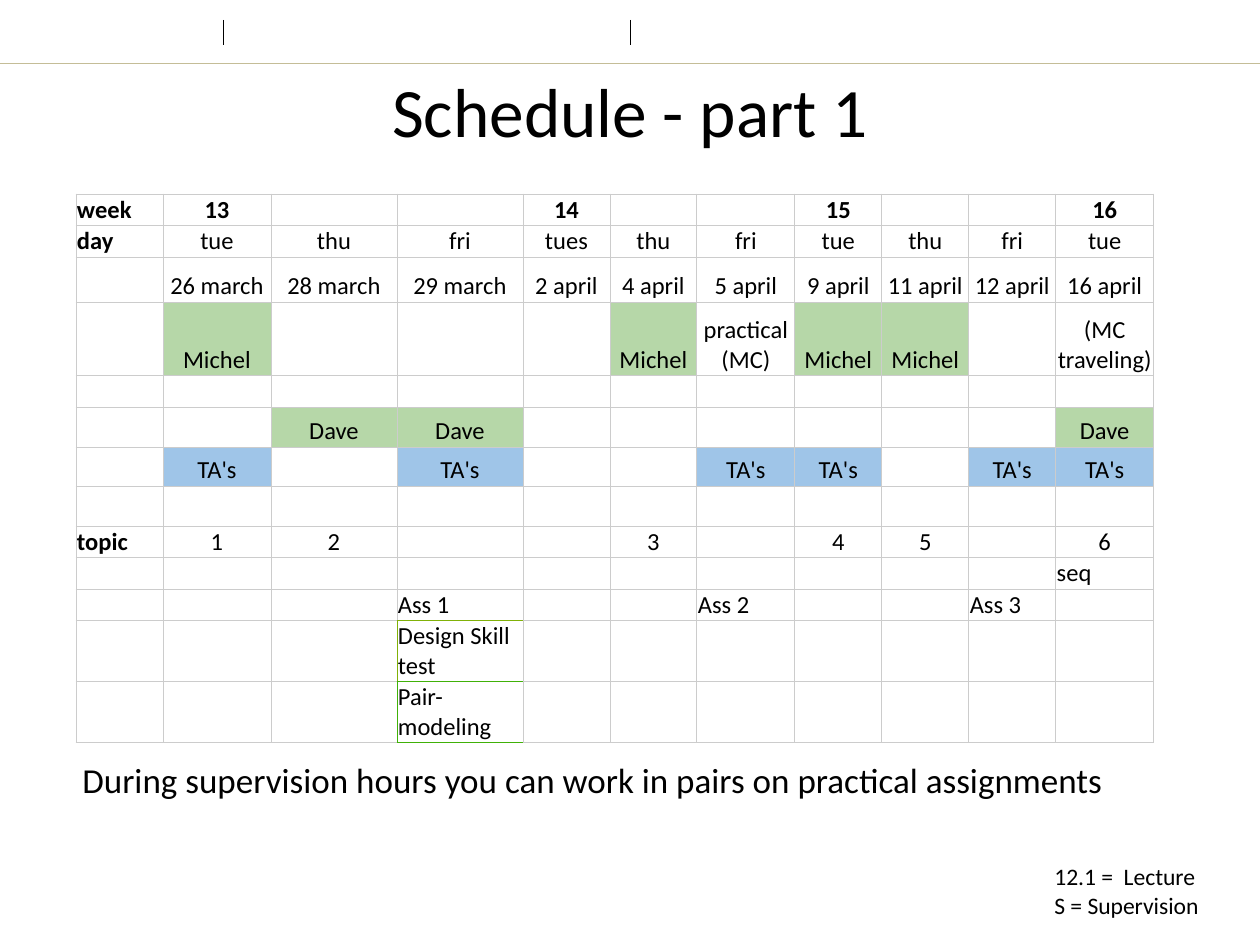
"""Build the course schedule slide with its table, note and legend."""
from dataclasses import dataclass

from lxml import etree
from pptx import Presentation
from pptx.dml.color import RGBColor
from pptx.enum.shapes import MSO_CONNECTOR
from pptx.enum.text import MSO_ANCHOR, PP_ALIGN
from pptx.oxml.ns import qn
from pptx.util import Emu, Pt

LEFT, CENTER = PP_ALIGN.LEFT, PP_ALIGN.CENTER
TOP, MIDDLE, BOTTOM = MSO_ANCHOR.TOP, MSO_ANCHOR.MIDDLE, MSO_ANCHOR.BOTTOM
STRAIGHT = MSO_CONNECTOR.STRAIGHT
SCALE = 914400 / 126


@dataclass(frozen=True)
class Theme:
    font: str = "Calibri"
    ink: str = "000000"
    rule: str = "C4BD97"
    grid: str = "CCCCCC"
    lecture: str = "B6D7A8"
    supervision: str = "9FC5E8"
    lime: str = "80B108"
    green: str = "40B108"
    title: float = 39.6
    note: float = 20
    legend: float = 13.5
    cell: float = 14
    border: float = 0.5


THEME = Theme()

TEXTS = [
    (["Schedule - part 1"], (63, 63, 1134, 94), THEME.title, CENTER, MIDDLE),
    (["12.1 =  Lecture", "S = Supervision"], (1042, 856, 210, 70), THEME.legend, LEFT, TOP),
    (["During supervision hours you can work in pairs on practical assignments"],
     (70, 752, 1182, 56), THEME.note, LEFT, TOP),
]
LINES = [
    ((0, 63, 1260, 63), THEME.rule, 0.25),
    ((223, 20, 223, 45), THEME.ink, 0.5),
    ((630, 20, 630, 45), THEME.ink, 0.5),
]

TABLE_ORIGIN = (76, 194)
COLUMN_WIDTHS = [87, 108, 126, 126, 87, 87, 98, 87, 87, 87, 98]
SCHEDULE = [
    (31, ["week", "13", "", "", "14", "", "", "15", "", "", "16"]),
    (31, ["day", "tue", "thu", "fri", "tues", "thu", "fri", "tue", "thu", "fri", "tue"]),
    (45, ["", "26 march", "28 march", "29 march", "2 april", "4 april", "5 april",
          "9 april", "11 april", "12 april", "16 april"]),
    (74, ["", "Michel", "", "", "", "Michel", "practical (MC)", "Michel", "Michel", "",
          "(MC traveling)"]),
    (31, [""] * 11),
    (40, ["", "", "Dave", "Dave", "", "", "", "", "", "", "Dave"]),
    (39, ["", "TA's", "", "TA's", "", "", "TA's", "TA's", "", "TA's", "TA's"]),
    (40, [""] * 11),
    (31, ["topic", "1", "2", "", "", "3", "", "4", "5", "", "6"]),
    (31, [""] * 10 + ["seq"]),
    (31, ["", "", "", "Ass 1", "", "", "Ass 2", "", "", "Ass 3", ""]),
    (61, ["", "", "", "Design Skill test"] + [""] * 7),
    (61, ["", "", "", "Pair-modeling"] + [""] * 7),
]
FIRST_LEFT_ROW = 9
FILLS = {"Michel": THEME.lecture, "Dave": THEME.lecture, "TA's": THEME.supervision}
ACCENT_BORDERS = {
    (10, 3): {"B": THEME.lime},
    (11, 2): {"R": THEME.lime},
    (11, 3): {"L": THEME.lime, "T": THEME.lime, "B": THEME.green},
    (12, 2): {"R": THEME.green},
    (12, 3): {"L": THEME.green, "T": THEME.green, "B": THEME.green},
}


def px(value):
    return Emu(round(value * SCALE))


def add_span(para, text, size, bold=False):
    span = para.add_run()
    span.text = text
    span.font.name = THEME.font
    span.font.size = Pt(size)
    span.font.bold = bold
    span.font.color.rgb = RGBColor.from_string(THEME.ink)


def add_text(slide, lines, place, size, align, anchor):
    frame = slide.shapes.add_textbox(*map(px, place)).text_frame
    frame.word_wrap = True
    frame.vertical_anchor = anchor
    for index, line in enumerate(lines):
        para = frame.add_paragraph() if index else frame.paragraphs[0]
        para.alignment = align
        add_span(para, line, size)


def add_line(slide, ends, color, width):
    line = slide.shapes.add_connector(STRAIGHT, *map(px, ends))
    line.line.color.rgb = RGBColor.from_string(color)
    line.line.width = Pt(width)
    etree.SubElement(line._element.spPr, qn("a:effectLst"))


def set_borders(cell, accents):
    properties = cell._tc.get_or_add_tcPr()
    for side in "LRTB":
        border = etree.SubElement(properties, qn(f"a:ln{side}"), w=str(Pt(THEME.border)))
        solid = etree.SubElement(border, qn("a:solidFill"))
        etree.SubElement(solid, qn("a:srgbClr"), val=accents.get(side, THEME.grid))


def fill_cell(cell, text, row, column):
    cell.margin_left = cell.margin_right = cell.margin_top = cell.margin_bottom = px(1)
    cell.vertical_anchor = BOTTOM
    set_borders(cell, ACCENT_BORDERS.get((row, column), {}))
    if text in FILLS:
        cell.fill.solid()
        cell.fill.fore_color.rgb = RGBColor.from_string(FILLS[text])
    else:
        cell.fill.background()
    para = cell.text_frame.paragraphs[0]
    para.alignment = LEFT if column == 0 or row >= FIRST_LEFT_ROW else CENTER
    if text:
        add_span(para, text, THEME.cell, bold=row == 0 or column == 0)
    else:
        etree.SubElement(para._p, qn("a:endParaRPr"), sz=str(THEME.cell * 100))


def add_schedule(slide):
    heights = [height for height, _ in SCHEDULE]
    place = (*TABLE_ORIGIN, sum(COLUMN_WIDTHS), sum(heights))
    table = slide.shapes.add_table(len(heights), len(COLUMN_WIDTHS), *map(px, place)).table
    table.first_row = table.horz_banding = False
    for column, width in zip(table.columns, COLUMN_WIDTHS):
        column.width = px(width)
    for row, (height, texts) in enumerate(SCHEDULE):
        table.rows[row].height = px(height)
        for column, text in enumerate(texts):
            fill_cell(table.cell(row, column), text, row, column)


def main():
    deck = Presentation()
    deck.slide_width, deck.slide_height = px(1260), px(945)
    slide = deck.slides.add_slide(deck.slide_layouts[6])
    for line in LINES:
        add_line(slide, *line)
    for text in TEXTS:
        add_text(slide, *text)
    add_schedule(slide)
    deck.save("out.pptx")


if __name__ == "__main__":
    main()
